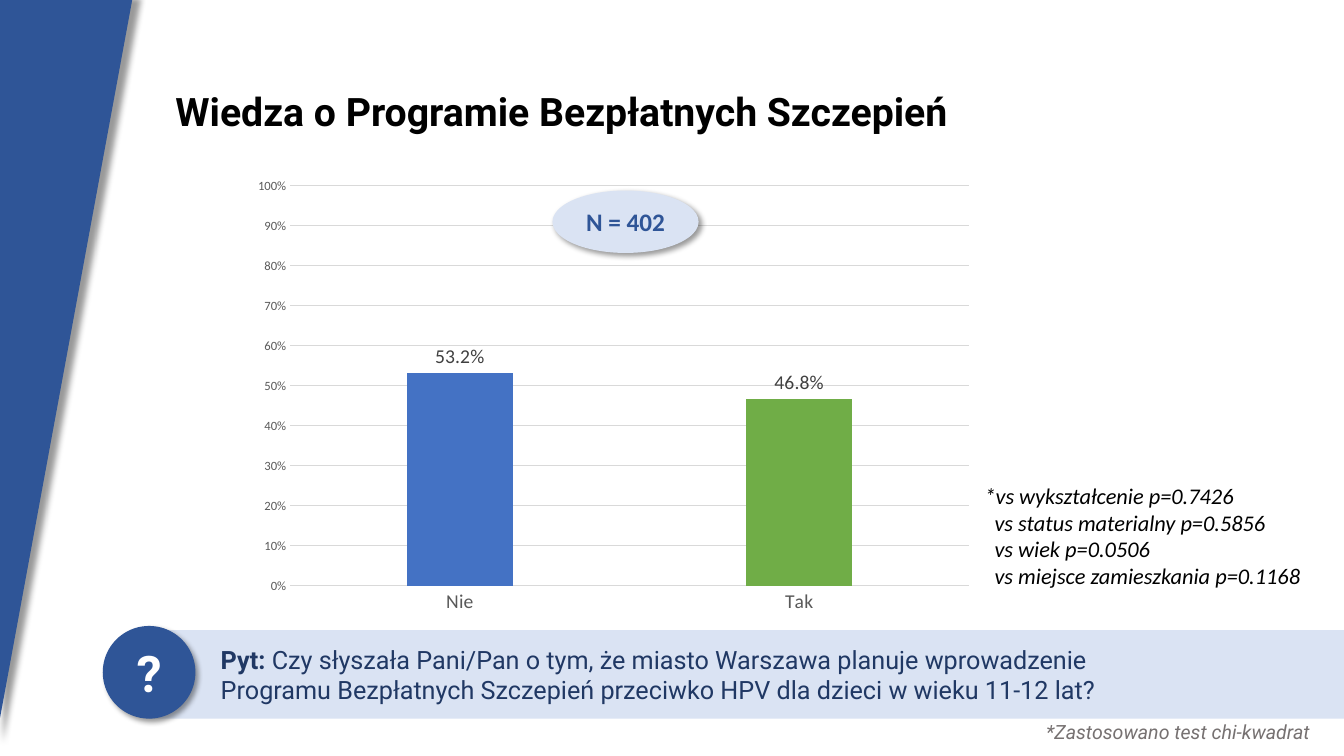
from lxml import etree
from pptx import Presentation
from pptx.chart.data import CategoryChartData
from pptx.dml.color import RGBColor
from pptx.enum.chart import XL_CHART_TYPE as ChartType, XL_LABEL_POSITION as LabelPos, XL_TICK_MARK as Tick
from pptx.enum.shapes import MSO_SHAPE as Preset
from pptx.enum.text import MSO_ANCHOR as Anchor, MSO_AUTO_SIZE as AutoSize, PP_ALIGN as Align
from pptx.oxml import parse_xml
from pptx.oxml.ns import qn
from pptx.util import Pt

BLUE, NAVY, PALE = "2F5597", "203864", "DAE3F3"
BLACK, WHITE, GRID, AXIS = "000000", "FFFFFF", "D9D9D9", "595959"
BODY, HEADING = "Calibri", "Roboto"


def rgb(code):
    return RGBColor.from_string(code)


def box(*lengths):
    return [Pt(length) for length in lengths]


def style_font(font, size, color, face=BODY, bold=False, italic=False):
    font.size, font.name, font.bold, font.italic = Pt(size), face, bold, italic
    font.color.rgb = rgb(color)


def add_run(paragraph, text, size, color, **style):
    run = paragraph.add_run()
    run.text = text
    style_font(run.font, size, color, **style)


class SlideBuilder:
    def __init__(self, deck):
        self.slide = deck.slides.add_slide(deck.slide_layouts[5])
        self.shapes = self.slide.shapes

    def title(self, at, text):
        title = self.shapes.title
        title.left, title.top, title.width, title.height = box(*at)
        frame = title.text_frame
        frame.auto_size, frame.vertical_anchor = AutoSize.NONE, Anchor.MIDDLE
        paragraph = frame.paragraphs[0]
        paragraph.alignment, paragraph.line_spacing = Align.LEFT, 0.9
        add_run(paragraph, text, 28, BLACK, face=HEADING, bold=True)

    def paint(self, shape, color, shadow_distance=0):
        shape.fill.solid()
        shape.fill.fore_color.rgb = rgb(color)
        shape.line.fill.background()
        shape.shadow.inherit = False
        if shadow_distance:
            effects = shape._element.spPr.find(qn("a:effectLst"))
            shadow = etree.SubElement(
                effects, qn("a:outerShdw"), blurRad=str(Pt(4)), dist=str(Pt(shadow_distance)),
                dir="2700000", algn="tl", rotWithShape="0")
            tone = etree.SubElement(shadow, qn("a:srgbClr"), val=BLACK)
            etree.SubElement(tone, qn("a:alpha"), val="40000")

    def panel(self, preset, at, color, shadow_distance=0):
        """Add a filled preset shape and return its first paragraph."""
        shape = self.shapes.add_shape(preset, *box(*at))
        self.paint(shape, color, shadow_distance)
        shape.text_frame.vertical_anchor = Anchor.MIDDLE
        return shape.text_frame.paragraphs[0]

    def badge(self, at, color, text, size, text_color, face):
        paragraph = self.panel(Preset.OVAL, at, color, 3)
        paragraph.alignment = Align.CENTER
        add_run(paragraph, text, size, text_color, face=face, bold=True)

    def question(self, at, lead, lines):
        paragraph = self.panel(Preset.RECTANGLE, at, PALE)
        paragraph.alignment = Align.LEFT
        paragraph._p.get_or_add_pPr().set("marL", str(Pt(44)))
        add_run(paragraph, lead, 18, NAVY, face=HEADING, bold=True)
        for number, line in enumerate(lines):
            if number:
                paragraph.add_line_break()
            add_run(paragraph, line, 18, NAVY, face=HEADING)

    def polygon(self, corners, color, shadow_distance):
        start, *others = [box(*corner) for corner in corners]
        builder = self.shapes.build_freeform(*start)
        builder.add_line_segments(others, close=True)
        self.paint(builder.convert_to_shape(), color, shadow_distance)

    def note(self, at, lines, size, color, face=BODY, wrap=True, hang=0):
        """Add italic lines; the first one hangs out by its asterisk."""
        frame = self.shapes.add_textbox(*box(*at)).text_frame
        frame.word_wrap = wrap
        for number, line in enumerate(lines):
            paragraph = frame.add_paragraph() if number else frame.paragraphs[0]
            add_run(paragraph, line, size, color, face=face, italic=True)
            if hang:
                properties = paragraph._p.get_or_add_pPr()
                properties.set("marL", str(Pt(hang)))
                properties.set("indent", str(0 if number else -Pt(hang)))

    def column_chart(self, at, shares, colors, plot):
        data = CategoryChartData(number_format="0.0%")
        data.categories = shares.keys()
        data.add_series("Series 1", shares.values())
        chart = self.shapes.add_chart(ChartType.COLUMN_CLUSTERED, *box(*at), data).chart
        chart.has_legend = chart.has_title = False
        style_font(chart.font, 10, BLACK)
        columns = chart.plots[0]
        columns.gap_width, columns.overlap, columns.vary_by_categories = 219, -27, False
        for number, color in enumerate(colors):
            fill = columns.series[0].points[number].format.fill
            fill.solid()
            fill.fore_color.rgb = rgb(color)
        columns.has_data_labels = True
        labels = columns.data_labels
        labels.show_value, labels.position = True, LabelPos.OUTSIDE_END
        labels.number_format, labels.number_format_is_linked = "0.0%", False
        style_font(labels.font, 14, "404040")
        answers, percent = chart.category_axis, chart.value_axis
        for axis, size in ((answers, 14), (percent, 9)):
            axis.major_tick_mark = axis.minor_tick_mark = Tick.NONE
            style_font(axis.tick_labels.font, size, AXIS)
        percent.minimum_scale, percent.maximum_scale, percent.major_unit = 0, 1, 0.1
        percent.tick_labels.number_format = "0%"
        percent.tick_labels.number_format_is_linked = False
        percent.format.line.fill.background()
        for line in (answers.format.line, percent.major_gridlines.format.line):
            line.color.rgb, line.width = rgb(GRID), Pt(0.75)
        self.place_plot(chart, plot)

    def place_plot(self, chart, plot):
        """Fix the inner plot area, given as fractions of the chart."""
        area = chart._chartSpace.chart.plotArea
        for old in area.findall(qn("c:layout")):
            area.remove(old)
        settings = [("layoutTarget", "inner"), ("xMode", "edge"), ("yMode", "edge"),
                    *zip("xywh", plot)]
        body = "".join(f'<c:{tag} val="{value}"/>' for tag, value in settings)
        area.insert(0, parse_xml(
            '<c:layout xmlns:c="http://schemas.openxmlformats.org/drawingml/2006/chart">'
            f"<c:manualLayout>{body}</c:manualLayout></c:layout>"))


def main():
    deck = Presentation()
    deck.slide_width, deck.slide_height = Pt(960), Pt(540)
    page = SlideBuilder(deck)
    page.question((106.6, 450, 853.4, 63.4), "Pyt: ", [
        "Czy słyszała Pani/Pan o tym, że miasto Warszawa planuje wprowadzenie",
        "Programu Bezpłatnych Szczepień przeciwko HPV dla dzieci w wieku 11-12 lat?"])
    page.column_chart((175.7, 123.1, 527, 324.7), {"Nie": 0.532, "Tak": 0.468},
                      ("4472C4", "70AD47"), plot=(0.06, 0.03, 0.92, 0.88))
    page.note((696.2, 340.6, 250.6, 106.6), [
        "*vs wykształcenie p=0.7426", "vs status materialny p=0.5856",
        "vs wiek p=0.0506", "vs miejsce zamieszkania p=0.1168"], 16, BLACK, hang=7.2)
    page.polygon([(95.5, -5.8), (-2.2, -5.8), (-2.2, 524.9)], BLUE, 6)
    page.title((118.1, 28.8, 748.1, 104.4), "Wiedza o Programie Bezpłatnych Szczepień")
    page.badge((394.6, 136.1, 104.4, 44.6), PALE, "N = 402", 18, BLUE, BODY)
    page.badge((73.4, 447.1, 66.2, 66.2), BLUE, "?", 36, WHITE, HEADING)
    page.note((740.2, 510.5, 210.2, 24.5), ["*Zastosowano test chi-kwadrat"],
              14, "767171", face=HEADING, wrap=False)
    deck.save("out.pptx")


if __name__ == "__main__":
    main()
